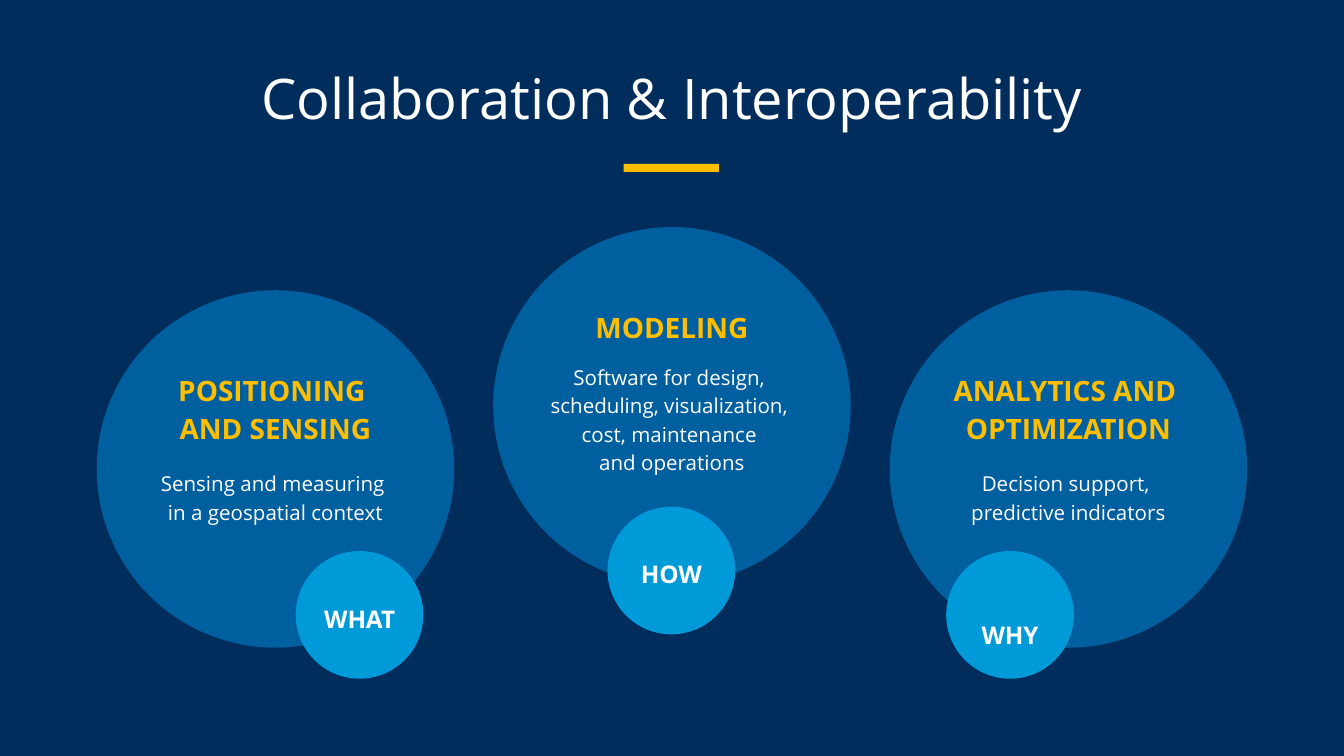
from dataclasses import dataclass

from pptx import Presentation
from pptx.dml.color import RGBColor
from pptx.enum.shapes import MSO_SHAPE
from pptx.enum.text import MSO_ANCHOR, MSO_AUTO_SIZE, PP_ALIGN
from pptx.util import Inches, Pt

OVAL, RECT = MSO_SHAPE.OVAL, MSO_SHAPE.RECTANGLE
TOP, MIDDLE, BOTTOM = MSO_ANCHOR.TOP, MSO_ANCHOR.MIDDLE, MSO_ANCHOR.BOTTOM
CENTER = PP_ALIGN.CENTER
TITLE_ONLY = 5


@dataclass(frozen=True)
class Theme:
    font: str = "Open Sans"
    navy: str = "002D5B"
    blue: str = "005F9E"
    sky: str = "009AD9"
    gold: str = "FFBE00"
    white: str = "FFFFFF"
    title: int = 30
    heading: int = 15
    badge: int = 13
    body: int = 11


THEME = Theme()
CARD_LEFT, CARD_STEP, CARD_SIZE = 0.72, 2.95, 2.66
BADGE_SIZE = 0.95


@dataclass(frozen=True)
class Card:
    heading: str
    body: str
    badge: str
    top: float
    body_offset: float
    body_height: float
    badge_left: float
    badge_top: float
    badge_anchor: MSO_ANCHOR = TOP


CARDS = [
    Card("POSITIONING \nAND SENSING",
         "Sensing and measuring \nin a geospatial context",
         "WHAT", 2.16, 1.22, 0.83, 2.2, 4.1),
    Card("MODELING",
         "Software for design, \nscheduling, visualization, \ncost, maintenance \nand operations",
         "HOW", 1.69, 0.9, 1.27, 4.52, 3.77),
    Card("ANALYTICS AND \nOPTIMIZATION",
         "Decision support, \npredictive indicators",
         "WHY", 2.16, 1.22, 0.83, 7.04, 4.1, MIDDLE),
]


def add_solid(slide, kind, left, top, width, height, color):
    sp = slide.shapes.add_shape(kind, Inches(left), Inches(top), Inches(width), Inches(height))
    sp.shadow.inherit = False
    sp.fill.solid()
    sp.fill.fore_color.rgb = RGBColor.from_string(color)
    sp.line.fill.background()


def style_paragraph(p, size, color, bold=False):
    p.alignment = CENTER
    p.font.name = THEME.font
    p.font.size = Pt(size)
    p.font.bold = bold
    p.font.color.rgb = RGBColor.from_string(color)


def add_text(slide, text, left, top, width, height, size, color, bold=False, anchor=TOP):
    box = slide.shapes.add_textbox(Inches(left), Inches(top), Inches(width), Inches(height))
    tf = box.text_frame
    tf.word_wrap = True
    tf.vertical_anchor = anchor
    tf.margin_left = tf.margin_right = tf.margin_top = tf.margin_bottom = Inches(0.1)
    p = tf.paragraphs[0]
    p.text = text
    p.line_spacing = 1.15
    style_paragraph(p, size, color, bold)


def add_title(slide, text):
    """Fill the title placeholder and underline it with a short bar."""
    sp = slide.shapes.title
    sp.left, sp.top, sp.width, sp.height = (Inches(v) for v in (0.74, 0.01, 8.52, 1.21))
    tf = sp.text_frame
    tf.auto_size = MSO_AUTO_SIZE.NONE
    tf.vertical_anchor = BOTTOM
    tf.margin_left = tf.margin_right = tf.margin_top = 0
    tf.margin_bottom = Inches(0.25)
    p = tf.paragraphs[0]
    p.text = text
    style_paragraph(p, THEME.title, THEME.white)
    add_solid(slide, RECT, 4.64, 1.22, 0.71, 0.06, THEME.gold)


def add_card(slide, left, card):
    add_solid(slide, OVAL, left, card.top, CARD_SIZE, CARD_SIZE, THEME.blue)
    add_text(slide, card.heading, left + 0.22, card.top + 0.48, 2.22, 0.49,
             THEME.heading, THEME.gold, bold=True)
    add_text(slide, card.body, left + 0.09, card.top + card.body_offset, 2.48,
             card.body_height, THEME.body, THEME.white)
    add_solid(slide, OVAL, card.badge_left, card.badge_top, BADGE_SIZE, BADGE_SIZE, THEME.sky)
    add_text(slide, card.badge, card.badge_left, card.badge_top + 0.26, BADGE_SIZE, 0.69,
             THEME.badge, THEME.white, bold=True, anchor=card.badge_anchor)


def main():
    prs = Presentation()
    prs.slide_width = Inches(10)
    prs.slide_height = prs.slide_width * 9 // 16
    slide = prs.slides.add_slide(prs.slide_layouts[TITLE_ONLY])
    slide.background.fill.solid()
    slide.background.fill.fore_color.rgb = RGBColor.from_string(THEME.navy)
    add_title(slide, "Collaboration & Interoperability")
    for i, card in enumerate(CARDS):
        add_card(slide, CARD_LEFT + i * CARD_STEP, card)
    prs.save("out.pptx")


if __name__ == "__main__":
    main()
